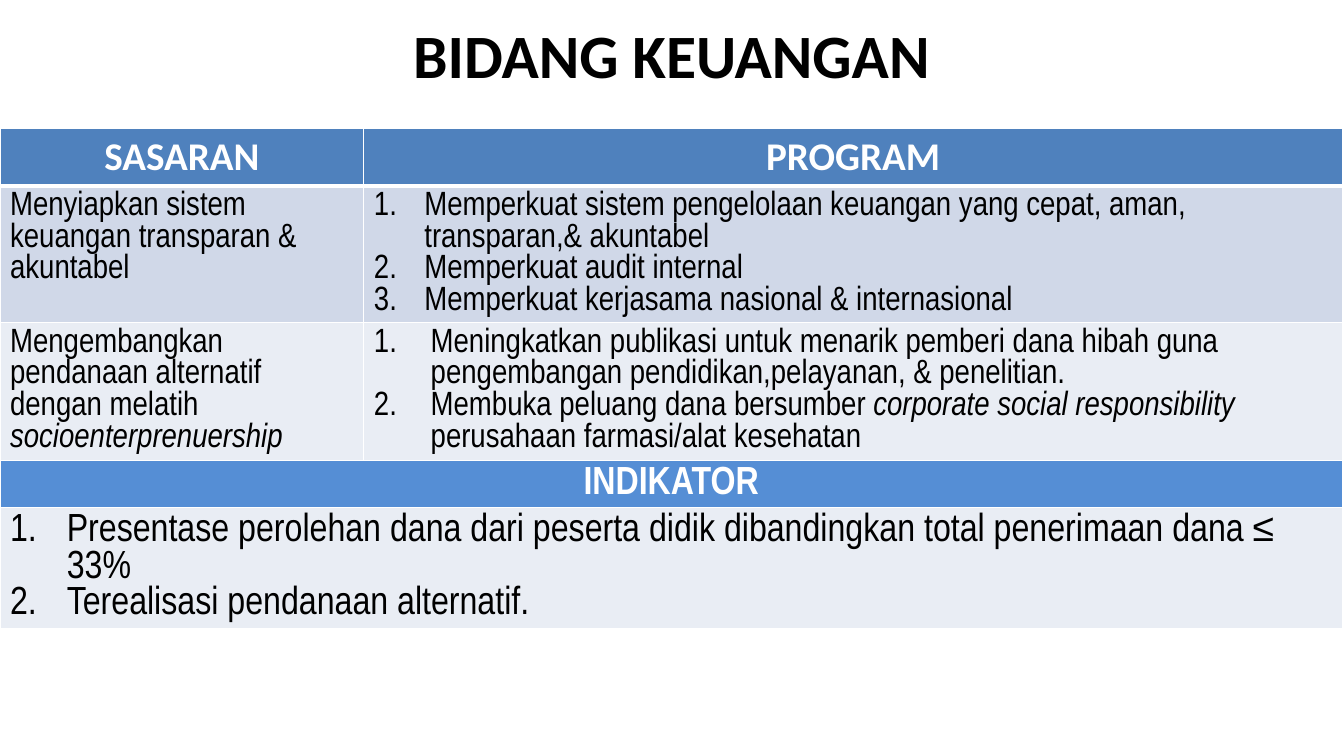
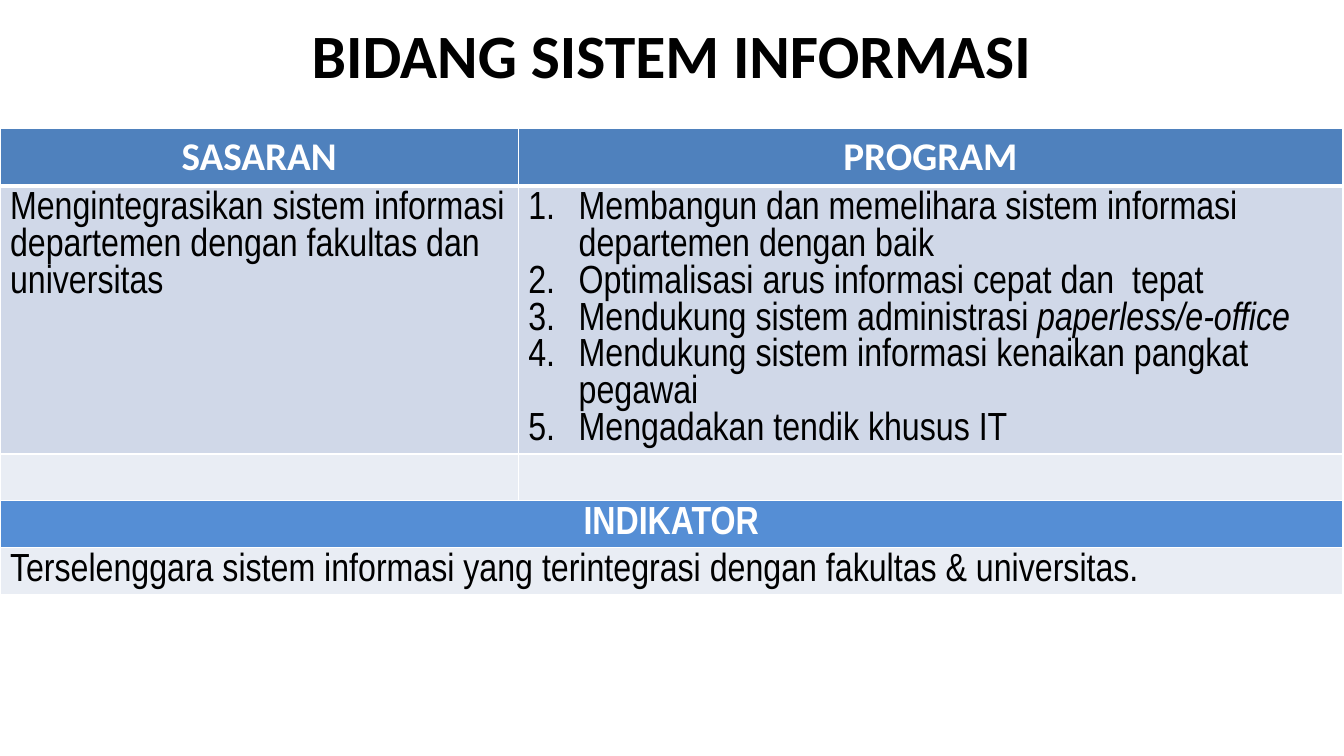
from dataclasses import dataclass

from lxml.etree import SubElement
from pptx import Presentation
from pptx.dml.color import RGBColor
from pptx.enum.text import MSO_ANCHOR as Anchor, MSO_AUTO_SIZE as AutoSize, PP_ALIGN as Align
from pptx.oxml.ns import qn
from pptx.util import Cm, Pt

COLORS = {
    "black": "000000", "white": "FFFFFF", "header": "4F81BD",
    "band": "D0D8E8", "pale": "E9EDF4", "indicator": "558ED5",
}
BODY = {"name": "Arial Narrow", "size": Pt(28), "bold": False, "color": "black"}
SMALL = BODY | {"size": Pt(24)}
LABEL = BODY | {"bold": True, "color": "white"}
HEADER = LABEL | {"name": "Calibri"}
TITLE = HEADER | {"size": Pt(44), "color": "black"}
TABLE_TOP, TABLE_WIDTH = 3.23, 33.83
HEADER_HEIGHT, LINE_HEIGHT = 1.46, 1.18


@dataclass
class Entry:
    """Text of one cell, with italics between asterisks."""
    lines: tuple
    style: dict
    indent: float = 0
    centered: bool = False


@dataclass
class Row:
    """One table row; a single entry spans both columns."""
    height: float
    fill: str
    entries: tuple
    top: float = 1
    bottom: float = 1


def style_span(span, style):
    """Apply a dict of font values to a run."""
    for name, value in style.items():
        if name == "color":
            span.font.color.rgb = RGBColor.from_string(COLORS[value])
        else:
            setattr(span.font, name, value)


def number_para(para, indent):
    """Give a paragraph automatic numbering and a hanging indent."""
    props = para._p.get_or_add_pPr()
    props.set("marL", str(Cm(indent)))
    props.set("indent", str(-Cm(indent)))
    SubElement(props, qn("a:buFont"), typeface="+mj-lt")
    SubElement(props, qn("a:buAutoNum"), type="arabicPeriod")


def write_entry(frame, entry):
    """Write the lines of an entry into a text frame."""
    for index, line in enumerate(entry.lines):
        para = frame.add_paragraph() if index else frame.paragraphs[0]
        para.alignment = Align.CENTER if entry.centered else Align.LEFT
        if entry.indent:
            number_para(para, entry.indent)
        for part, text in enumerate(line.split("*")):
            if text:
                span = para.add_run()
                span.text = text
                style_span(span, entry.style | {"italic": part % 2 == 1})


def format_cell(cell, row):
    """Set the borders and fill of a cell."""
    props = cell._tc.get_or_add_tcPr()
    for side, width in {"L": 1, "R": 1, "T": row.top, "B": row.bottom}.items():
        line = SubElement(props, qn(f"a:ln{side}"), w=str(Pt(width)))
        solid = SubElement(line, qn("a:solidFill"))
        SubElement(solid, qn("a:srgbClr"), val=COLORS["white"])
    cell.fill.solid()
    cell.fill.fore_color.rgb = RGBColor.from_string(COLORS[row.fill])


def add_title(page, text):
    """Fill and place the title placeholder."""
    box = page.shapes.title
    places = {"left": 1.69, "top": 0.58, "width": 30.48, "height": 1.57}
    for name, value in places.items():
        setattr(box, name, Cm(value))
    frame = box.text_frame
    frame.auto_size = AutoSize.NONE
    frame.vertical_anchor = Anchor.MIDDLE
    write_entry(frame, Entry((text,), TITLE, centered=True))


def add_plan(page, split, rows):
    """Add the plan table, with its columns divided at split."""
    height = sum(row.height for row in rows)
    table = page.shapes.add_table(
        len(rows), 2, Cm(0), Cm(TABLE_TOP), Cm(TABLE_WIDTH), Cm(height)).table
    table.horz_banding = False
    for column, width in zip(table.columns, (split, TABLE_WIDTH - split)):
        column.width = Cm(width)
    for index, row in enumerate(rows):
        table.rows[index].height = Cm(row.height)
        cells = [table.cell(index, column) for column in range(2)]
        for cell in cells:
            format_cell(cell, row)
        if len(row.entries) == 1:
            cells[0].merge(cells[1])
        for cell, entry in zip(cells, row.entries):
            write_entry(cell.text_frame, entry)


def add_page(deck, title, split, goals, indicator):
    """Add a slide with goals, programmes and indicators."""
    page = deck.slides.add_slide(deck.slide_layouts[5])
    add_title(page, title)
    headings = tuple(Entry((text,), HEADER, centered=True) for text in ("SASARAN", "PROGRAM"))
    label = Entry(("INDIKATOR",), LABEL, centered=True)
    header = Row(HEADER_HEIGHT, "header", headings, bottom=3)
    divider = Row(LINE_HEIGHT, "indicator", (label,))
    goals[0].top = 3
    add_plan(page, split, [header, *goals, divider, indicator])


def main():
    """Build and save the deck."""
    deck = Presentation()
    deck.slide_width, deck.slide_height = Cm(33.87), Cm(19.05)

    add_page(deck, "BIDANG KEUANGAN", 9.17, [
        Row(3.43, "band", (
            Entry(("Menyiapkan sistem keuangan transparan & akuntabel",), SMALL),
            Entry((
                "Memperkuat sistem pengelolaan keuangan yang cepat, aman, transparan,& akuntabel",
                "Memperkuat audit internal",
                "Memperkuat kerjasama nasional & internasional",
            ), SMALL, 1.27))),
        Row(3.48, "pale", (
            Entry(("Mengembangkan pendanaan alternatif dengan melatih *socioenterprenuership*",), SMALL),
            Entry((
                "Meningkatkan publikasi untuk menarik pemberi dana hibah guna "
                "pengembangan pendidikan,pelayanan, & penelitian.",
                "Membuka peluang dana bersumber *corporate social responsibility *"
                "perusahaan farmasi/alat kesehatan",
            ), SMALL, 1.43))),
    ], Row(3.03, "pale", (
        Entry((
            "Presentase perolehan dana dari peserta didik dibandingkan total penerimaan dana ≤ 33%",
            "Terealisasi pendanaan alternatif.",
        ), BODY, 1.43),)))

    add_page(deck, "BIDANG SISTEM INFORMASI", 13.06, [
        Row(6.75, "band", (
            Entry(("Mengintegrasikan sistem informasi departemen dengan fakultas dan universitas",), BODY),
            Entry((
                "Membangun dan memelihara sistem informasi departemen dengan baik",
                "Optimalisasi arus informasi cepat dan  tepat",
                "Mendukung sistem administrasi *paperless/e-office*",
                "Mendukung sistem informasi kenaikan pangkat pegawai",
                "Mengadakan tendik khusus IT",
            ), BODY, 1.27))),
        Row(LINE_HEIGHT, "pale", ()),
    ], Row(LINE_HEIGHT, "pale", (
        Entry((
            "Terselenggara sistem informasi yang terintegrasi dengan fakultas & universitas.",
        ), BODY),)))

    deck.save("out.pptx")


if __name__ == "__main__":
    main()
